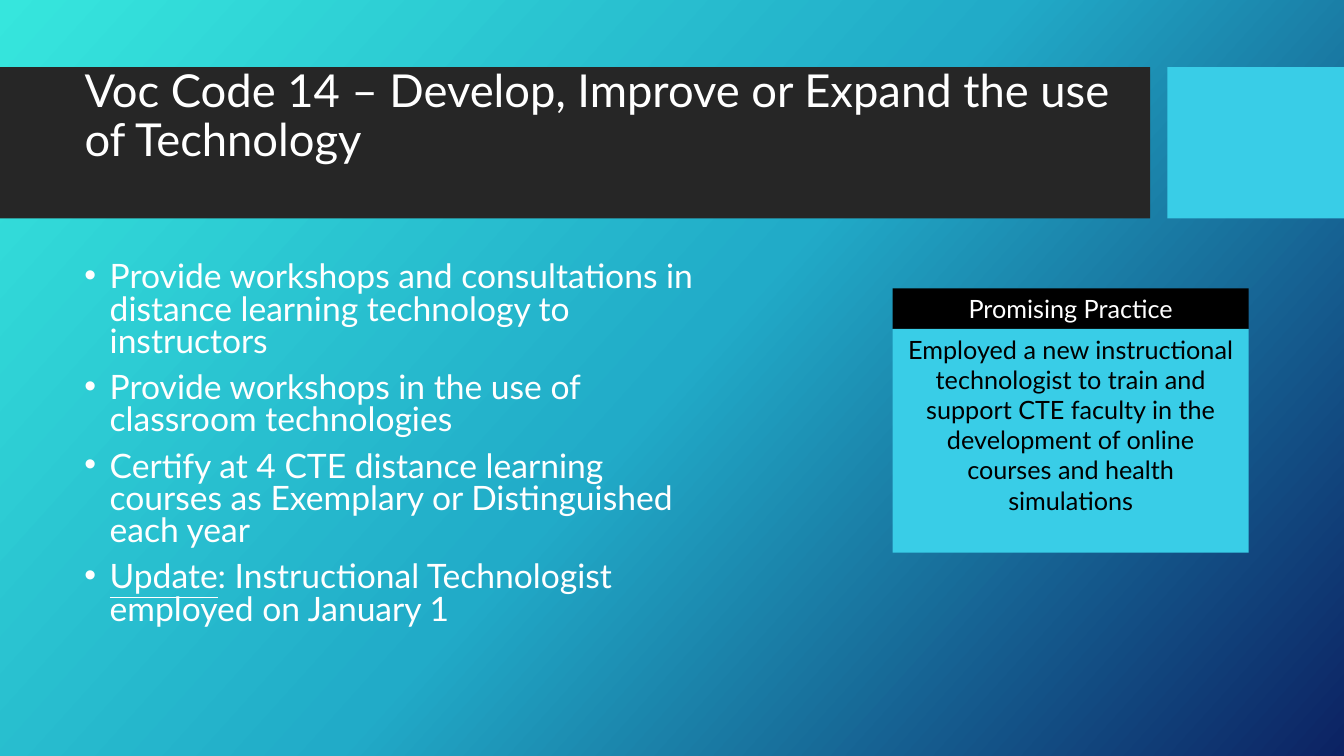
from copy import deepcopy

from pptx import Presentation
from pptx.dml.color import RGBColor
from pptx.enum.shapes import MSO_SHAPE as Preset
from pptx.enum.text import MSO_ANCHOR as Anchor, PP_ALIGN as Align
from pptx.oxml.ns import qn
from pptx.oxml.xmlchemy import OxmlElement
from pptx.util import Pt

TITLE = "Voc Code 14 – Develop, Improve or Expand the use of Technology"
BULLETS = [
    [("Provide workshops and consultations in distance learning technology to instructors", False)],
    [("Provide workshops in the use of classroom technologies", False)],
    [("Certify at 4 CTE distance learning courses as Exemplary or Distinguished each year", False)],
    [("Update", True), (": Instructional Technologist employed on January 1", False)],
]
PRACTICE_HEAD = "Promising Practice"
PRACTICE = ("Employed a new instructional technologist to train and support CTE faculty "
            "in the development of online courses and health simulations")

WHITE, BLACK, CHARCOAL, CYAN = "FFFFFF", "000000", "262626", "39CDE7"
BACKGROUND = [(0, "36E6DD"), (0.5, "21ABC8"), (1, "0C2263")]
GRADIENT_ANGLE = 42
FONT = "Lato"

SLIDE_W, SLIDE_H = 960, 540
BAND_TOP, BAND_H = 48, 108
BAND_W, ACCENT_LEFT = 821.5, 833.8
TEXT_LEFT = 53.3
CARD_LEFT, CARD_TOP, CARD_W = 637.7, 205.9, 254.2
CARD_HEAD_H, CARD_BODY_H = 29, 159.8
INDENT = 18
TITLE_LIFT = 38.6  # bottom inset that raises the centred title by half a line


def color(value):
    return RGBColor.from_string(value)


def apply(target, formats):
    for name, value in formats.items():
        setattr(target, name, value)


def paint_background(page):
    page.background.fill.gradient()
    first = next(page.element.iter(qn("a:gs")))
    first.addnext(deepcopy(first))
    fill = page.background.fill
    fill.gradient_angle = 360 - GRADIENT_ANGLE
    for stop, (position, value) in zip(fill.gradient_stops, BACKGROUND):
        stop.position = position
        stop.color.rgb = color(value)


def add_block(page, left, top, width, height, fill):
    block = page.shapes.add_shape(Preset.RECTANGLE, Pt(left), Pt(top), Pt(width), Pt(height))
    block.shadow.inherit = False
    block.fill.solid()
    block.fill.fore_color.rgb = color(fill)
    block.line.fill.background()
    return block


def add_text(page, left, top, width, height):
    return page.shapes.add_textbox(Pt(left), Pt(top), Pt(width), Pt(height))


def write(box, paragraphs, size, value, frame_formats, para_formats, bullet=False):
    """Fill a box with paragraphs, each a list of (text, underlined) spans."""
    frame = box.text_frame
    apply(frame, {"word_wrap": True, **frame_formats})
    for index, spans in enumerate(paragraphs):
        para = frame.paragraphs[0] if index == 0 else frame.add_paragraph()
        apply(para, para_formats)
        if index:
            para.space_before = Pt(10)
        if bullet:
            add_bullet(para)
        for text, underlined in spans:
            span = para.add_run()
            span.text = text
            apply(span.font, {"name": FONT, "size": Pt(size), "underline": underlined})
            span.font.color.rgb = color(value)


def add_bullet(para):
    props = para._p.get_or_add_pPr()
    props.set("marL", str(Pt(INDENT)))
    props.set("indent", str(-Pt(INDENT)))
    for tag, key, value in [("a:buFont", "typeface", "Arial"), ("a:buChar", "char", "•")]:
        mark = OxmlElement(tag)
        mark.set(key, value)
        props.append(mark)


def main():
    deck = Presentation()
    deck.slide_width, deck.slide_height = Pt(SLIDE_W), Pt(SLIDE_H)
    page = deck.slides.add_slide(deck.slide_layouts[6])
    paint_background(page)

    add_block(page, 0, BAND_TOP, BAND_W, BAND_H, CHARCOAL)
    add_block(page, ACCENT_LEFT, BAND_TOP, SLIDE_W - ACCENT_LEFT, BAND_H, CYAN)

    title = add_text(page, TEXT_LEFT, 59, 756.7, 85)
    write(title, [[(TITLE, False)]], 32.4, WHITE,
          {"vertical_anchor": Anchor.MIDDLE, "margin_bottom": Pt(TITLE_LIFT)},
          {"line_spacing": 0.9})

    body = add_text(page, TEXT_LEFT, 184.3, 457.9, 283.7)
    write(body, BULLETS, 24, WHITE, {"vertical_anchor": Anchor.TOP},
          {"line_spacing": 0.8}, bullet=True)

    card_top = CARD_TOP
    for text, height, fill, value in [(PRACTICE_HEAD, CARD_HEAD_H, BLACK, WHITE),
                                      (PRACTICE, CARD_BODY_H, CYAN, BLACK)]:
        card = add_block(page, CARD_LEFT, card_top, CARD_W, height, fill)
        write(card, [[(text, False)]], 18, value, {"vertical_anchor": Anchor.TOP},
              {"alignment": Align.CENTER})
        card_top += height

    deck.save("out.pptx")


if __name__ == "__main__":
    main()
